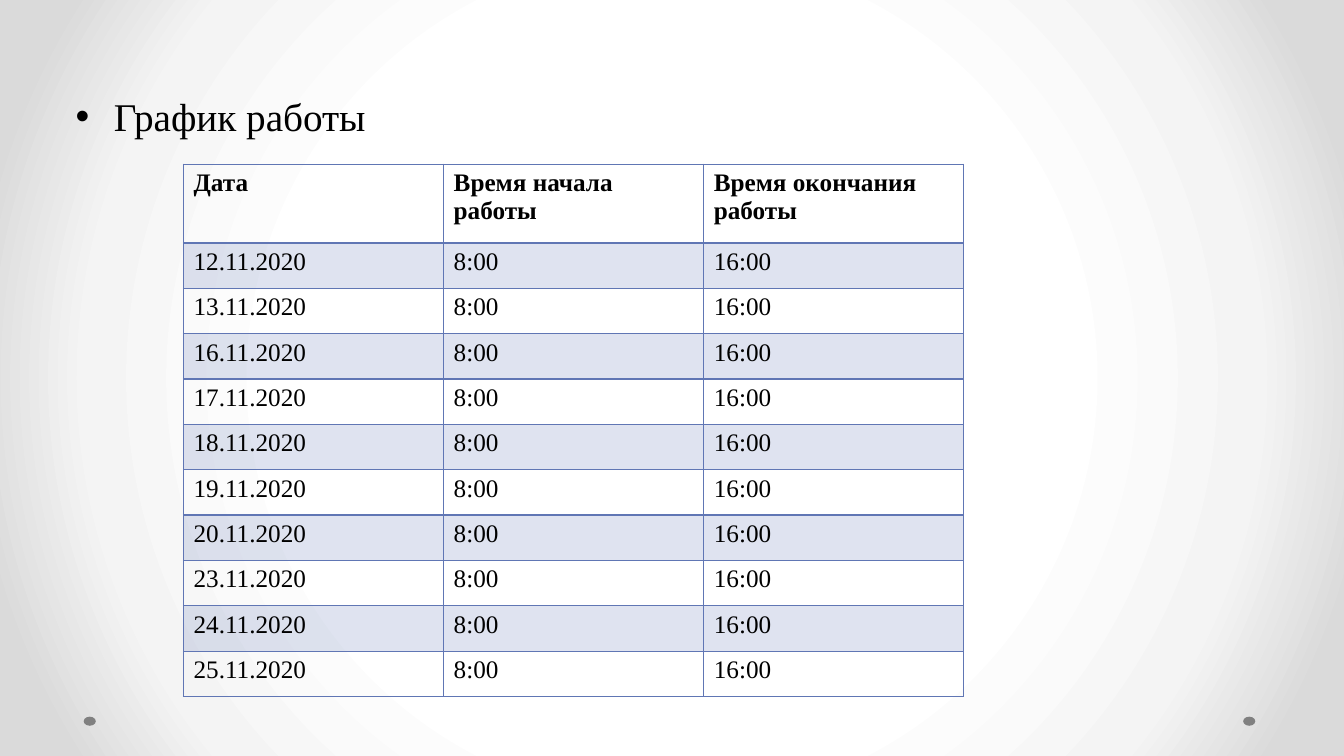
"""Build a work schedule slide with a bulleted heading and a table of shifts."""
import pptx
import pptx.dml.color
import pptx.enum.shapes
import pptx.enum.text
import pptx.oxml
import pptx.oxml.ns
import pptx.util

Inches = pptx.util.Inches
Pt = pptx.util.Pt
qn = pptx.oxml.ns.qn
NS = pptx.oxml.ns.nsdecls("a")
BLUE = "6076B4"


def color(value):
    return pptx.dml.color.RGBColor.from_string(value)


def add_run(p, text, size, bold):
    r = p.add_run()
    r.text = text
    for name, value in {"name": "Times New Roman", "size": Pt(size), "bold": bold}.items():
        setattr(r.font, name, value)
    r.font.color.rgb = color("000000")


prs = pptx.Presentation()
prs.slide_width, prs.slide_height = Inches(13.33), Inches(7.5)
s = prs.slides.add_slide(prs.slide_layouts[1])
title = s.shapes.title.element
title.getparent().remove(title)

s.background.fill.gradient()
grad = s.element.find(".//" + qn("a:gradFill"))
stops = "".join(
    f'<a:gs pos="{pos}000"><a:srgbClr val="{value}"/></a:gs>'
    for pos, value in [(50, "FFFFFF"), (76, "F4F4F4"), (92, "DADADA")]
)
grad.getparent().replace(grad, pptx.oxml.parse_xml(
    f'<a:gradFill {NS} rotWithShape="1"><a:gsLst>{stops}</a:gsLst><a:path path="circle">'
    '<a:fillToRect l="50000" t="50000" r="50000" b="50000"/></a:path></a:gradFill>'
))

for left in (12.33, 0.83):
    dot = s.shapes.add_shape(
        pptx.enum.shapes.MSO_SHAPE.OVAL, Inches(left), Inches(7.11), Inches(0.12), Inches(0.09)
    )
    dot.shadow.inherit = False
    dot.fill.solid()
    dot.fill.fore_color.rgb = color("808080")
    dot.line.fill.background()

body = s.placeholders[1]
box = {"left": 0.65, "top": 0.87, "width": 12, "height": 5.39}
for name, value in box.items():
    setattr(body, name, Inches(value))
tf = body.text_frame
tf.vertical_anchor = pptx.enum.text.MSO_ANCHOR.TOP
p = tf.paragraphs[0]
add_run(p, "График работы", 28, False)
pPr = p._p.get_or_add_pPr()
pPr.set("marL", str(Inches(0.38)))
pPr.set("indent", str(Inches(-0.38)))

rows = [("Дата", "Время начала работы", "Время окончания работы")]
rows += [(f"{day}.11.2020", "8:00", "16:00") for day in (12, 13, 16, 17, 18, 19, 20, 23, 24, 25)]
table = s.shapes.add_table(
    len(rows), 3, Inches(1.82), Inches(1.63), Inches(7.73), Inches(5.27)
).table
table.first_row = table.horz_banding = False
for column in table.columns:
    column.width = Inches(2.58)

for i, texts in enumerate(rows):
    header = i == 0
    table.rows[i].height = Inches(0.78 if header else 0.45)
    for j, text in enumerate(texts):
        cell = table.cell(i, j)
        add_run(cell.text_frame.paragraphs[0], text, 18, header)
        tcPr = cell._tc.get_or_add_tcPr()
        if i % 2:
            cell.fill.solid()
            cell.fill.fore_color.rgb = color(BLUE)
            tcPr.find(".//" + qn("a:srgbClr")).append(
                pptx.oxml.parse_xml(f'<a:alpha {NS} val="20000"/>')
            )
        else:
            cell.fill.background()
        widths = {"L": 1, "R": 1, "T": 2 if i == 1 else 1, "B": 2 if header else 1}
        for k, (side, width) in enumerate(widths.items()):
            tcPr.insert(k, pptx.oxml.parse_xml(
                f'<a:ln{side} {NS} w="{Pt(width)}"><a:solidFill><a:srgbClr val="{BLUE}"/>'
                f'</a:solidFill></a:ln{side}>'
            ))

prs.save("out.pptx")
